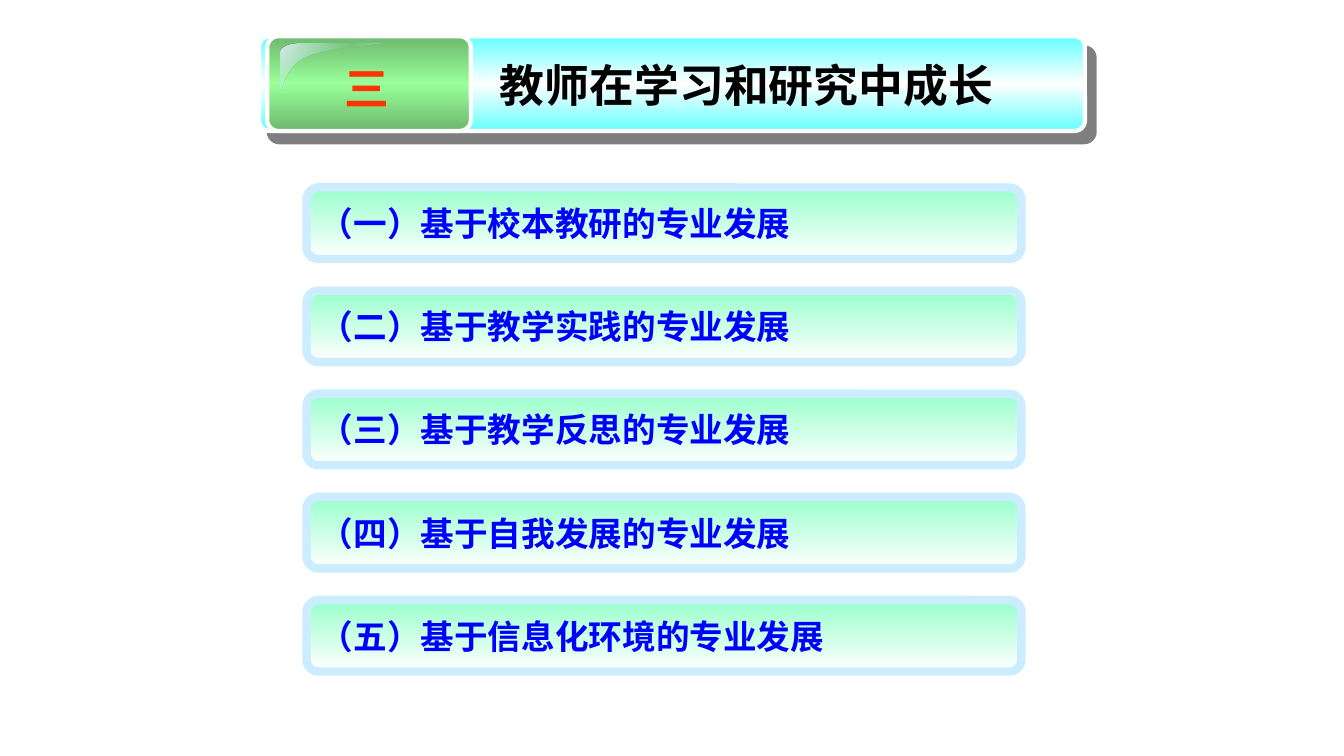
from lxml import etree
from pptx import Presentation
from pptx import util as u
from pptx.dml.color import RGBColor
from pptx.enum import shapes, text
from pptx.oxml import ns

BLACK = RGBColor(0x00, 0x00, 0x00)
WHITE = RGBColor(0xFF, 0xFF, 0xFF)
BLUE = RGBColor(0x00, 0x00, 0xFF)
ORANGE_RED = RGBColor(0xFF, 0x33, 0x00)
CYAN = RGBColor(0x66, 0xFF, 0xFF)
LEAF = RGBColor(0x6E, 0xB8, 0x6E)
LIME = RGBColor(0x99, 0xFF, 0x99)
MINT = RGBColor(0x99, 0xFF, 0xCC)
PALE_BLUE = RGBColor(0xCC, 0xEC, 0xFF)
GLOSS = RGBColor(0xDD, 0xEF, 0xF0)
GLOSS_MID = RGBColor(0xBB, 0xE0, 0xE3)
CJK = "Noto Sans CJK SC"


def paint(shape, stops, angle=90):
    """Fill with a gradient of (percent, colour, opacity percent) stops."""
    shape.shadow.inherit = False
    shape.fill.gradient()
    gradient = shape._element.spPr.find(ns.qn("a:gradFill"))
    for child in list(gradient):
        gradient.remove(child)
    stop_list = etree.SubElement(gradient, ns.qn("a:gsLst"))
    for position, colour, opacity in stops:
        stop = etree.SubElement(stop_list, ns.qn("a:gs"), pos=str(position * 1000))
        tint = etree.SubElement(stop, ns.qn("a:srgbClr"), val=str(colour))
        if opacity < 100:
            etree.SubElement(tint, ns.qn("a:alpha"), val=str(opacity * 1000))
    etree.SubElement(gradient, ns.qn("a:lin"), ang=str(angle * 60000), scaled="0")


def write(shape, wording, font_format, align, **frame_format):
    frame = shape.text_frame
    for name, value in frame_format.items():
        setattr(frame, name, value)
    paragraph = frame.paragraphs[0]
    paragraph.alignment = align
    run = paragraph.add_run()
    run.text = wording
    colour = font_format["colour"]
    for name in ("name", "size", "bold"):
        setattr(run.font, name, font_format[name])
    run.font.color.rgb = colour
    etree.SubElement(run.font._element, ns.qn("a:ea"), typeface=font_format["name"])


presentation = Presentation()
presentation.slide_width = u.Inches(13.33)
presentation.slide_height = u.Inches(7.5)
slide = presentation.slides.add_slide(presentation.slide_layouts[6])

# Title bar and number badge
header = []
for left, width, corner, edge, middle in (
    (2.57, 8.19, 0.109, CYAN, WHITE),
    (2.65, 2.02, 0.119, LEAF, LIME),
):
    shape = slide.shapes.add_shape(
        shapes.MSO_SHAPE.ROUNDED_RECTANGLE,
        u.Inches(left), u.Inches(0.36), u.Inches(width), u.Inches(0.94))
    shape.adjustments[0] = corner
    paint(shape, [(0, edge, 100), (50, middle, 100), (100, edge, 100)])
    shape.line.color.rgb = WHITE
    shape.line.width = u.Pt(3)
    header.append(shape)

# Hard shadow under the title bar
effects = header[0]._element.spPr.find(ns.qn("a:effectLst"))
shadow = etree.SubElement(effects, ns.qn("a:outerShdw"), blurRad="0",
                          dist=str(u.Pt(10.6)), dir=str(49 * 60000),
                          algn="ctr", rotWithShape="0")
shade = etree.SubElement(shadow, ns.qn("a:srgbClr"), val=str(BLACK))
etree.SubElement(shade, ns.qn("a:alpha"), val="50000")

# Gloss on the badge: cubic curves in thousandths of an inch
curves = [
    [(2980, 430), (2870, 430), (2780, 470), (2780, 520)],
    [(2780, 890), (2820, 900), (2800, 670), (3050, 560)],
    [(3050, 560), (3300, 460), (3790, 450), (3770, 430)],
]
STEPS = 16
outline = []
for curve in curves:
    for step in range(STEPS + 1):
        t = step / STEPS
        weights = ((1 - t) ** 3, 3 * t * (1 - t) ** 2, 3 * t * t * (1 - t), t ** 3)
        outline.append(tuple(
            round(sum(w * point[axis] for w, point in zip(weights, curve)))
            for axis in (0, 1)))
builder = slide.shapes.build_freeform(*outline[0], scale=u.Inches(1) / 1000)
builder.add_line_segments(outline[1:], close=True)
gloss = builder.convert_to_shape()
paint(gloss, [(0, GLOSS, 100), (50, GLOSS_MID, 0), (100, GLOSS, 100)], 45)
gloss.line.fill.background()

# Header wording
for wording, left, top, width, font, colour, align in (
    ("三", 2.85, 0.55, 1.58, "Arial", ORANGE_RED, text.PP_ALIGN.CENTER),
    ("教师在学习和研究中成长", 4.86, 0.52, 5.75, CJK, BLACK, text.PP_ALIGN.LEFT),
):
    box = slide.shapes.add_textbox(
        u.Inches(left), u.Inches(top), u.Inches(width), u.Inches(0.64))
    write(box, wording,
          {"name": font, "size": u.Pt(32), "bold": True, "colour": colour},
          align, word_wrap=True, auto_size=text.MSO_AUTO_SIZE.SHAPE_TO_FIT_TEXT)

# Five topic bars at an equal pitch
topics = ("（一）基于校本教研", "（二）基于教学实践", "（三）基于教学反思",
          "（四）基于自我发展", "（五）基于信息化环境")
FIRST_TOP, PITCH = 1.86, 1.023
for row, topic in enumerate(topics):
    bar = slide.shapes.add_shape(
        shapes.MSO_SHAPE.ROUNDED_RECTANGLE,
        u.Inches(3.04), u.Inches(FIRST_TOP + row * PITCH),
        u.Inches(7.09), u.Inches(0.71))
    paint(bar, [(0, MINT, 100), (100, WHITE, 100)])
    bar.line.color.rgb = PALE_BLUE
    bar.line.width = u.Pt(6)
    write(bar, topic + "的专业发展",
          {"name": CJK, "size": u.Pt(24), "bold": True, "colour": BLUE},
          text.PP_ALIGN.LEFT, word_wrap=False,
          vertical_anchor=text.MSO_ANCHOR.MIDDLE)

presentation.save("out.pptx")
